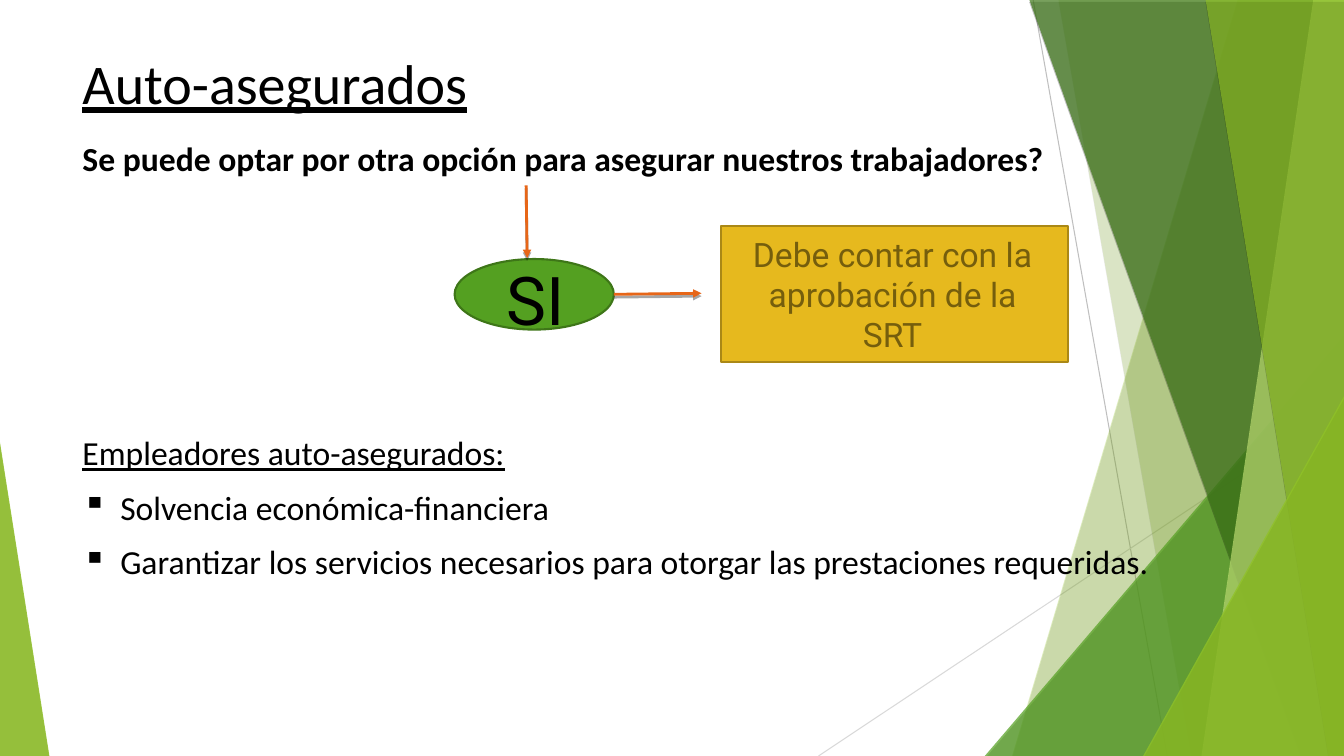
from dataclasses import dataclass
from typing import Optional, Union

from lxml.etree import SubElement
from pptx import Presentation
from pptx.dml.color import RGBColor
from pptx.enum.shapes import MSO_CONNECTOR, MSO_SHAPE
from pptx.enum.text import PP_ALIGN
from pptx.oxml.ns import qn
from pptx.util import Pt

WIDTH, HEIGHT = 960, 540
BLEED = -0.6  # top edge of the panels
LIME, GREEN, ORANGE = "90C226", "54A021", "E76618"


@dataclass
class Panel:
    """A band from its slanted left edge to the right side of the slide."""
    top_x: float
    bottom_x: float
    color: str
    opacity: int


@dataclass
class Wedge:
    """A triangle standing on the bottom edge."""
    left: float
    top: float
    width: float
    apex: float
    color: str
    opacity: int


@dataclass
class Line:
    start: tuple[float, float]
    end: tuple[float, float]
    color: str
    weight: float
    arrow: bool = False


@dataclass
class Node:
    kind: MSO_SHAPE
    box: tuple[float, float, float, float]
    fill: str
    outline: str


@dataclass
class Paragraph:
    text: str
    size: float = 24
    font: str = "Calibri"
    color: str = "000000"
    bold: bool = False
    underline: bool = False
    align: Optional[PP_ALIGN] = None
    before: float = 0
    bullet: str = ""


@dataclass
class TextBlock:
    box: tuple[float, float, float, float]
    paragraphs: list[Paragraph]


# Content, from back to front
GUIDES = [
    Line((738, 0), (833.76, HEIGHT), "BFBFBF", 0.75),
    Line((WIDTH, 290.16), (584.64, HEIGHT), "D9D9D9", 0.75),
]
FACETS = [
    Panel(884.16, 722.88, LIME, 30),
    Panel(756, 851.04, LIME, 20),
    Wedge(703.44, 239.76, 256.56, 1, GREEN, 72),
    Panel(735.12, 929.52, "3F7819", 70),
    Panel(938.16, 858.24, "C0E474", 70),
    Panel(861.12, 948.96, LIME, 65),
    Wedge(816.48, 282.96, 143.52, 1, LIME, 80),
    Wedge(0, 316.08, 35.28, 0, LIME, 85),
]
NODES = [
    Node(MSO_SHAPE.OVAL, (324.72, 185.04, 113.76, 50.4), GREEN, "3E7618"),
    Node(MSO_SHAPE.RECTANGLE, (514.8, 161.28, 248.4, 97.2), "E6B91E", "AA8816"),
]
ARROWS = [
    Line((375.84, 132.48), (376.56, 184.32), ORANGE, 2, True),
    Line((438.48, 210.24), (501.12, 209.52), ORANGE, 2, True),
]
JUSTIFY, CENTER = PP_ALIGN.JUSTIFY, PP_ALIGN.CENTER
TEXTS = [
    TextBlock((51.84, 30.96, 681.12, 55.44), [
        Paragraph("Auto-asegurados", 40, underline=True)]),
    TextBlock((51.84, 95.04, 789.12, 70.56), [
        Paragraph("Se puede optar por otra opción para asegurar nuestros trabajadores?", bold=True)]),
    TextBlock((354.96, 180.72, 64.08, 64.8), [Paragraph("SI", 48, "Roboto")]),
    TextBlock((520.56, 163.44, 234, 115.2), [
        Paragraph("Debe contar con la aprobación de la SRT", 24, "Roboto", "755E0D", align=CENTER)]),
    TextBlock((51.84, 305.28, 789.12, 130.32), [
        Paragraph("Empleadores auto-asegurados:", underline=True, align=JUSTIFY),
        Paragraph("Solvencia económica-financiera", align=JUSTIFY, before=10, bullet="▪"),
        Paragraph("Garantizar los servicios necesarios para otorgar las prestaciones requeridas.",
                  align=JUSTIFY, before=10, bullet="▪")]),
]


def rgb(color: str) -> RGBColor:
    return RGBColor.from_string(color)


def add_effects(properties, shadow: bool) -> None:
    effects = properties.find(qn("a:effectLst"))
    if effects is None:
        effects = SubElement(properties, qn("a:effectLst"))
    if shadow:
        outer = SubElement(effects, qn("a:outerShdw"), blurRad="0", dist=str(Pt(2)),
                           dir="5400000", rotWithShape="0")
        tint = SubElement(outer, qn("a:srgbClr"), val="000000")
        SubElement(tint, qn("a:alpha"), val="35000")


def draw_line(page, line: Line) -> None:
    connector = page.shapes.add_connector(
        MSO_CONNECTOR.STRAIGHT, *map(Pt, line.start + line.end))
    connector.line.color.rgb = rgb(line.color)
    connector.line.width = Pt(line.weight)
    properties = connector.element.spPr
    if line.arrow:
        SubElement(properties.find(qn("a:ln")), qn("a:tailEnd"), type="triangle")
    add_effects(properties, line.arrow)


def draw_facet(page, facet: Union[Panel, Wedge]) -> None:
    if isinstance(facet, Panel):
        builder = page.shapes.build_freeform(Pt(facet.top_x), Pt(BLEED), scale=1.0)
        corners = [(WIDTH, BLEED), (WIDTH, HEIGHT), (facet.bottom_x, HEIGHT)]
        builder.add_line_segments([(Pt(x), Pt(y)) for x, y in corners], close=True)
        shape = builder.convert_to_shape()
    else:
        box = (facet.left, facet.top, facet.width, HEIGHT - facet.top)
        shape = page.shapes.add_shape(MSO_SHAPE.ISOSCELES_TRIANGLE, *map(Pt, box))
        shape.adjustments[0] = facet.apex
    shape.fill.solid()
    shape.fill.fore_color.rgb = rgb(facet.color)
    properties = shape.element.spPr
    tint = properties.find(qn("a:solidFill")).find(qn("a:srgbClr"))
    SubElement(tint, qn("a:alpha"), val=str(facet.opacity * 1000))
    shape.line.fill.background()
    shape.shadow.inherit = False
    add_effects(properties, True)


def draw_node(page, node: Node) -> None:
    shape = page.shapes.add_shape(node.kind, *map(Pt, node.box))
    shape.shadow.inherit = False
    shape.fill.solid()
    shape.fill.fore_color.rgb = rgb(node.fill)
    shape.line.color.rgb = rgb(node.outline)
    shape.line.width = Pt(1.5)


def draw_text(page, block: TextBlock) -> None:
    frame = page.shapes.add_textbox(*map(Pt, block.box)).text_frame
    frame.word_wrap = True
    for index, item in enumerate(block.paragraphs):
        paragraph = frame.add_paragraph() if index else frame.paragraphs[0]
        paragraph.text = item.text
        paragraph.alignment = item.align
        paragraph.space_before = Pt(item.before)
        font = paragraph.font
        font.name, font.size, font.bold = item.font, Pt(item.size), item.bold
        font.underline = item.underline
        font.color.rgb = rgb(item.color)
        if item.bullet:
            properties = paragraph._p.get_or_add_pPr()
            properties.set("marL", str(Pt(27)))
            properties.set("indent", str(Pt(-27)))
            bullet = properties.makeelement(qn("a:buChar"), {"char": item.bullet})
            properties.find(qn("a:defRPr")).addprevious(bullet)


def main() -> None:
    deck = Presentation()
    deck.slide_width, deck.slide_height = Pt(WIDTH), Pt(HEIGHT)
    page = deck.slides.add_slide(deck.slide_layouts[6])
    for draw, items in ((draw_line, GUIDES), (draw_facet, FACETS), (draw_node, NODES),
                        (draw_line, ARROWS), (draw_text, TEXTS)):
        for item in items:
            draw(page, item)
    deck.save("out.pptx")


if __name__ == "__main__":
    main()
